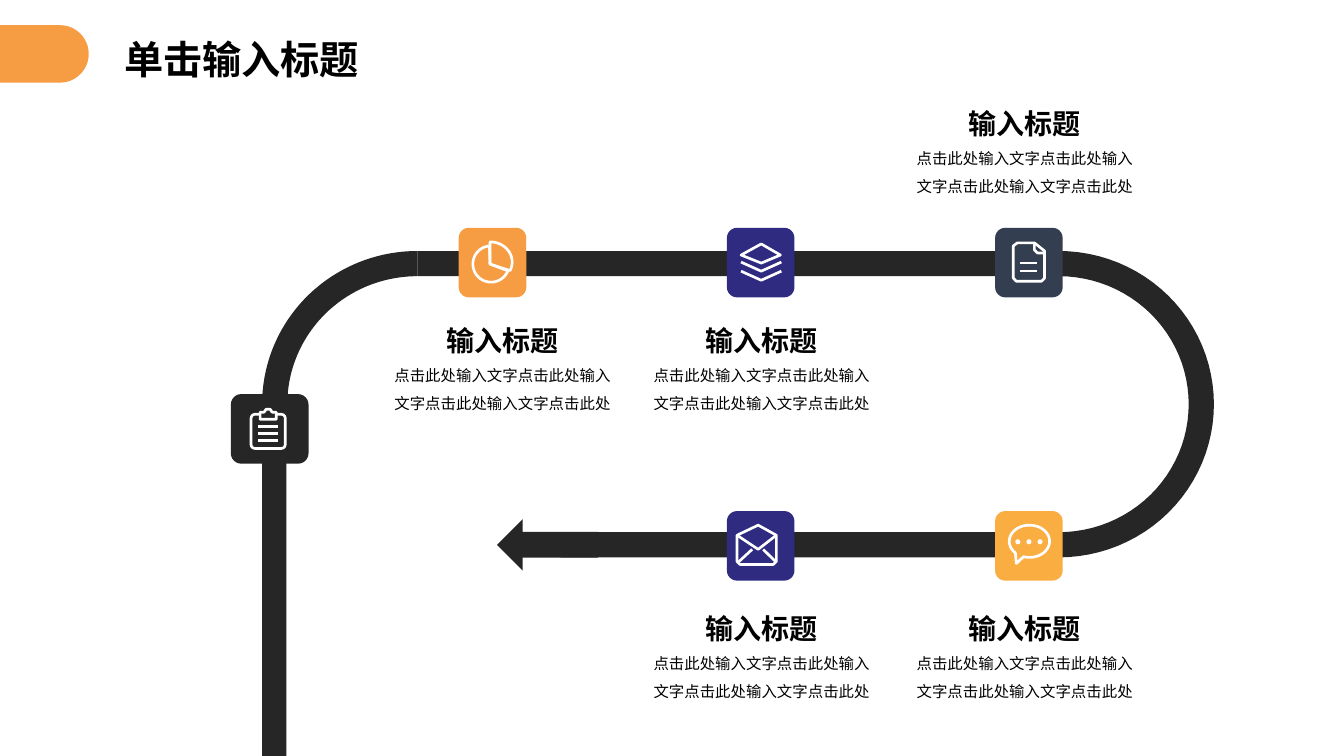
import math
from lxml import etree
from pptx import Presentation
from pptx.dml.color import RGBColor
from pptx.enum.shapes import MSO_CONNECTOR, MSO_SHAPE
from pptx.enum.text import MSO_ANCHOR, PP_ALIGN
from pptx.oxml.ns import qn
from pptx.util import Pt

PX = 9144
RECT, ROUND, OVAL = MSO_SHAPE.RECTANGLE, MSO_SHAPE.ROUNDED_RECTANGLE, MSO_SHAPE.OVAL
ARROW = MSO_SHAPE.LEFT_ARROW
STRAIGHT = MSO_CONNECTOR.STRAIGHT
CENTER, JUSTIFY, MIDDLE = PP_ALIGN.CENTER, PP_ALIGN.JUSTIFY, MSO_ANCHOR.MIDDLE

BLACK = RGBColor(0x00, 0x00, 0x00)
WHITE = RGBColor(0xFF, 0xFF, 0xFF)
TRACK = RGBColor(0x26, 0x26, 0x26)
ORANGE = RGBColor(0xF6, 0x9D, 0x44)
AMBER = RGBColor(0xFA, 0xAD, 0x41)
INDIGO = RGBColor(0x2E, 0x2B, 0x81)
SLATE = RGBColor(0x33, 0x3F, 0x50)

TITLE_FONT, BODY_FONT = "Noto Sans CJK SC", "Calibri"
STROKE = Pt(1.9)
BAND = 25
OUTER_X, OUTER_Y = 154, 152
HEADING = "输入标题"
BODY = "点击此处输入文字点击此处输入文字点击此处输入文字点击此处"


def emu(*lengths):
    return [round(v * PX) for v in lengths]


def solid(sp, color):
    sp.shadow.inherit = False
    sp.fill.solid()
    sp.fill.fore_color.rgb = color
    sp.line.fill.background()


def stroked(sp):
    sp.shadow.inherit = False
    sp.fill.background()
    sp.line.color.rgb = WHITE
    sp.line.width = STROKE


def block(s, kind, box, color, adj=None):
    sp = s.shapes.add_shape(kind, *emu(*box))
    if adj is not None:
        sp.adjustments[0] = adj
    solid(sp, color)


def arc(cx, cy, rx, ry, start, end, steps=48):
    angles = [math.radians(start + (end - start) * i / steps) for i in range(steps + 1)]
    return [(cx + rx * math.cos(a), cy + ry * math.sin(a)) for a in angles]


def freeform(s, points, x=0, y=0, close=True):
    pts = [emu(x + px, y + py) for px, py in points]
    fb = s.shapes.build_freeform(*pts[0], scale=1.0)
    fb.add_line_segments(pts[1:], close=close)
    return fb.convert_to_shape()


def outline(s, x, y, points, close=True):
    stroked(freeform(s, points, x, y, close))


def stroke(s, x, y, x1, y1, x2, y2):
    c = s.shapes.add_connector(STRAIGHT, *emu(x + x1, y + y1, x + x2, y + y2))
    c.line.color.rgb = WHITE
    c.line.width = STROKE
    etree.SubElement(c._element.spPr, qn("a:effectLst"))


def mail_icon(s, x, y):
    outline(s, x, y, [(22, 1), (40, 11), (40, 37), (37, 40), (4, 40), (1, 37), (1, 11)])
    outline(s, x, y, [(1, 11), (22, 25), (40, 11)], close=False)
    stroke(s, x, y, 2, 38, 16, 25)
    stroke(s, x, y, 40, 38, 27, 25)


def chat_icon(s, x, y):
    outline(s, x, y, arc(21, 17, 20, 16, 107, -226) + [(8, 39)])
    for left in (7, 18, 29):
        block(s, OVAL, (x + left, y + 15, 5, 5), WHITE)


def layers_icon(s, x, y):
    outline(s, x, y, [(1, 13), (21, 2), (40, 13), (21, 21)])
    for top in (20, 29):
        outline(s, x, y, [(1, top), (21, top + 9), (41, top)], close=False)


def pie_icon(s, x, y):
    outline(s, x, y, arc(19, 23, 18, 18, -95, -338) + [(18, 23)])
    outline(s, x, y, arc(18, 21, 22, 20, -90, 25) + [(18, 23)])


def clipboard_icon(s, x, y):
    sp = s.shapes.add_shape(ROUND, *emu(x + 1, y + 6, 34, 34))
    sp.adjustments[0] = 0.12
    stroked(sp)
    clip = freeform(s, [(10, 4), (14, 4), (16, 1), (20, 1), (22, 4),
                        (26, 4), (26, 11), (10, 11)], x, y)
    stroked(clip)
    clip.fill.solid()
    clip.fill.fore_color.rgb = TRACK
    for top in (18, 25, 32):
        stroke(s, x, y, 8, top, 28, top)


def document_icon(s, x, y):
    outline(s, x, y, [(5, 1), (22, 1), (32, 9), (32, 36), (29, 39), (4, 39), (1, 36), (1, 4)])
    outline(s, x, y, [(22, 1), (22, 8), (25, 11), (32, 11)], close=False)
    for top in (21, 29):
        stroke(s, x, y, 8, top, 25, top)


def tile(s, box, color, icon, dx, dy):
    block(s, ROUND, box, color, 0.15)
    icon(s, box[0] + dx, box[1] + dy)


def bend(s, cx, cy, start, end):
    outer = arc(cx, cy, OUTER_X, OUTER_Y, start, end)
    inner = arc(cx, cy, OUTER_X - BAND, OUTER_Y - BAND, end, start)
    solid(freeform(s, outer + inner), TRACK)


def track(s, left, top, right, bottom):
    cy = top + OUTER_Y
    left_cx, right_cx = left + OUTER_X, right - OUTER_X
    bend(s, right_cx, cy, -90, 90)
    bend(s, left_cx, cy, 180, 270)
    block(s, RECT, (left_cx, top, right_cx - left_cx, BAND), TRACK)
    block(s, RECT, (556, cy + OUTER_Y - BAND, right_cx - 556, BAND), TRACK)
    block(s, RECT, (left, cy, BAND - 1, bottom - cy), TRACK)
    block(s, ARROW, (493, cy + OUTER_Y - 38, 100, 51), TRACK)


def run(p, text, size, font, bold):
    r = p.add_run()
    r.text = text
    r.font.size, r.font.name, r.font.bold = Pt(size), font, bold
    r.font.color.rgb = BLACK
    return r


def caption(s, x, y):
    tf = s.shapes.add_textbox(*emu(x, y, 243, 116)).text_frame
    tf.word_wrap = True
    for i, (text, size, bold) in enumerate([(HEADING, 20, True), (BODY, 11, False)]):
        p = tf.add_paragraph() if i else tf.paragraphs[0]
        p.alignment, p.line_spacing = CENTER, 1.5
        run(p, text, size, BODY_FONT, bold)


def header(s, x, y):
    block(s, ROUND, (x, y, 124, 57), ORANGE, 0.5)
    sp = s.shapes.title
    sp.left, sp.top, sp.width, sp.height = emu(x + 154, y + 10, 281, 47)
    tf = sp.text_frame
    tf.vertical_anchor, tf.word_wrap = MIDDLE, True
    tf.margin_left = tf.margin_right = 5 * PX
    tf.margin_top = tf.margin_bottom = 0
    p = tf.paragraphs[0]
    p.alignment = JUSTIFY
    r = run(p, "单击输入标题", 28, TITLE_FONT, True)
    etree.SubElement(r.font._element, qn("a:ea")).set("typeface", TITLE_FONT)


def main():
    prs = Presentation()
    prs.slide_width, prs.slide_height = emu(1333, 750)
    s = prs.slides.add_slide(prs.slide_layouts[5])
    header(s, -36, 25)
    track(s, 260, 249, 1204, 750)
    tile(s, (229, 391, 77, 69), TRACK, clipboard_icon, 19, 14)
    for x, y, color, icon, dx, dy in [
        (455, 226, ORANGE, pie_icon, 13, 13),
        (721, 226, INDIGO, layers_icon, 13, 14),
        (987, 226, SLATE, document_icon, 17, 14),
        (987, 507, AMBER, chat_icon, 13, 13),
        (721, 507, INDIGO, mail_icon, 9, 13),
    ]:
        tile(s, (x, y, 67, 69), color, icon, dx, dy)
    for x, y in [(377, 299), (634, 299), (895, 84), (634, 585), (895, 585)]:
        caption(s, x, y)
    prs.save("out.pptx")


if __name__ == "__main__":
    main()
